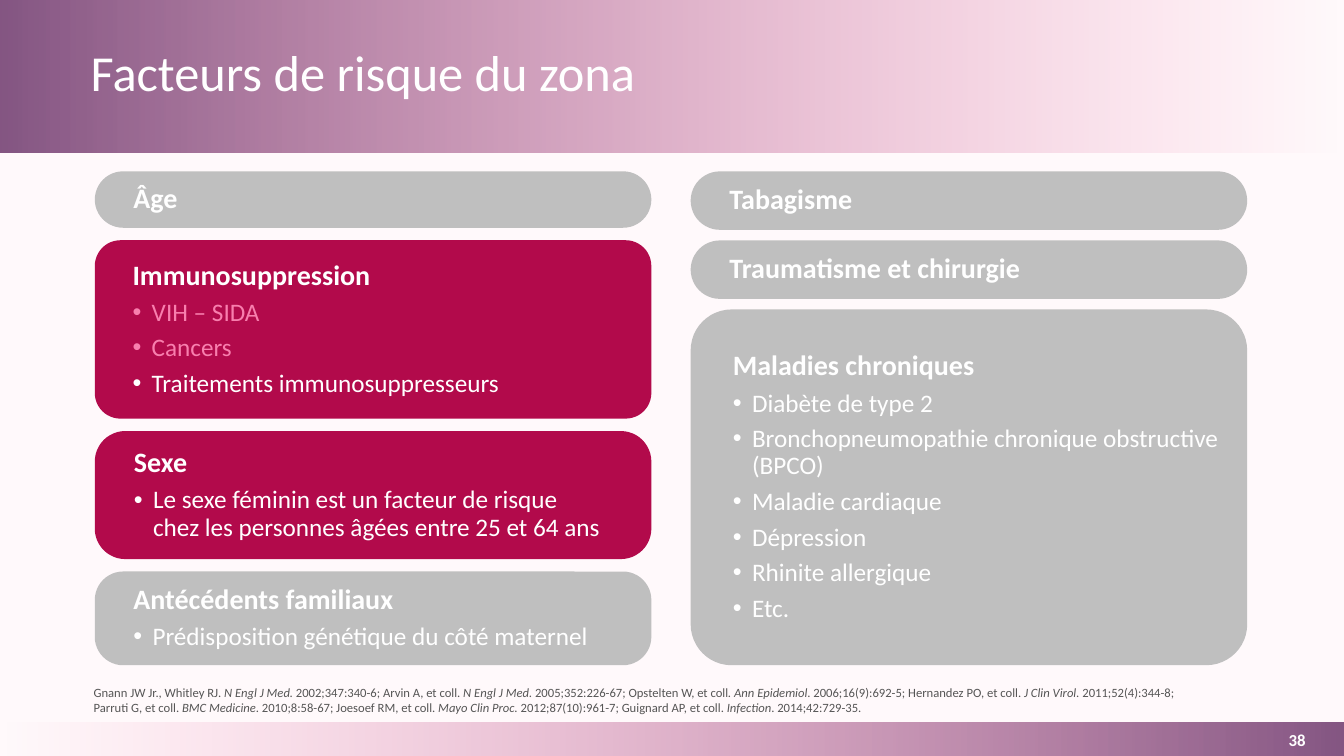
"""Build the slide on risk factors for shingles."""
import pptx
import pptx.util
import pptx.dml.color
import pptx.enum.shapes
import pptx.enum.text
import pptx.oxml.ns
import lxml.etree

Inches, Pt = pptx.util.Inches, pptx.util.Pt
Shape = pptx.enum.shapes.MSO_SHAPE
Align = pptx.enum.text.PP_ALIGN
Anchor = pptx.enum.text.MSO_ANCHOR
qn = pptx.oxml.ns.qn

HUES = {"page": "FFF9FB", "plum": "855683", "pink": "F87FAE", "wine": "B20A4B",
        "gray": "BFBFBF", "white": "FFFFFF", "note": "555555"}
WIDE, HIGH = 13.33, 7.5
TOP, BASE = 1.7, 6.6
CARD = 5.52


def hue(name):
    return pptx.dml.color.RGBColor.from_string(HUES[name])


def style(run, size, tint, bold=False, slant=False):
    font = run.font
    font.name, font.size = "Calibri", Pt(size)
    font.bold, font.italic = bold, slant
    font.color.rgb = hue(tint)


deck = pptx.Presentation()
deck.slide_width, deck.slide_height = Inches(WIDE), Inches(HIGH)
slide = deck.slides.add_slide(deck.slide_layouts[5])
slide.background.fill.solid()
slide.background.fill.fore_color.rgb = hue("page")

for top, height, angle in [(7.17, 0.33, 180), (0, 1.51, 0)]:
    band = slide.shapes.add_shape(Shape.RECTANGLE, 0, Inches(top), Inches(WIDE), Inches(height))
    band.shadow.inherit = False
    band.line.fill.background()
    band.fill.gradient()
    band.fill.gradient_angle = angle
    for stop, tint, place in zip(band.fill.gradient_stops, ("plum", "pink"), (0, 1)):
        stop.color.rgb = hue(tint)
        stop.position = place
    last = band._element.spPr.findall(".//" + qn("a:srgbClr"))[-1]
    lxml.etree.SubElement(last, qn("a:alpha"), val="0")
    slide.shapes._spTree.remove(band._element)
    slide.shapes._spTree.insert(2, band._element)

title = slide.shapes.title
title.left, title.top = Inches(0.8), Inches(0.18)
title.width, title.height = Inches(11.47), Inches(1.14)
frame = title.text_frame
frame.text = "Facteurs de risque du zona"
frame.auto_size = pptx.enum.text.MSO_AUTO_SIZE.NONE
frame.vertical_anchor = Anchor.MIDDLE
frame.paragraphs[0].alignment = Align.LEFT
frame.paragraphs[0].line_spacing = 0.9
style(frame.paragraphs[0].runs[0], 36, "white")

stacks = [
    (0.94, [
        (0.56, 0.5, "gray", ["Âge"]),
        (1.77, 0.144, "wine", ["Immunosuppression", "VIH – SIDA", "Cancers",
                               "Traitements immunosuppresseurs"]),
        (1.27, 0.238, "wine", ["Sexe", "Le sexe féminin est un facteur de risque\n"
                               "chez les personnes âgées entre 25 et 64 ans"]),
        (0.93, 0.303, "gray", ["Antécédents familiaux",
                               "Prédisposition génétique du côté maternel"]),
    ]),
    (6.85, [
        (0.58, 0.5, "gray", ["Tabagisme"]),
        (0.58, 0.5, "gray", ["Traumatisme et chirurgie"]),
        (3.53, 0.115, "gray", ["Maladies chroniques", "Diabète de type 2",
                               "Bronchopneumopathie chronique obstructive (BPCO)",
                               "Maladie cardiaque", "Dépression", "Rhinite allergique",
                               "Etc."]),
    ]),
]
faded = {"VIH – SIDA", "Cancers"}

for left, cards in stacks:
    gap = (BASE - TOP - sum(card[0] for card in cards)) / (len(cards) - 1)
    top = TOP
    for height, curve, tint, lines in cards:
        card = slide.shapes.add_shape(Shape.ROUNDED_RECTANGLE, Inches(left), Inches(top),
                                      Inches(CARD), Inches(height))
        top += height + gap
        card.adjustments[0] = curve
        card.shadow.inherit = False
        card.line.fill.background()
        card.fill.solid()
        card.fill.fore_color.rgb = hue(tint)
        frame = card.text_frame
        frame.word_wrap = True
        frame.vertical_anchor = Anchor.MIDDLE
        frame.margin_left, frame.margin_right = Inches(0.3), Inches(0.07)
        frame.margin_top = frame.margin_bottom = 0
        for row, line in enumerate(lines):
            para = frame.add_paragraph() if row else frame.paragraphs[0]
            para.text = line
            para.alignment = Align.LEFT
            para.line_spacing = 0.9
            para.space_after = Pt(6)
            if row:
                props = para._p.get_or_add_pPr()
                props.set("marL", str(Inches(0.19)))
                props.set("indent", str(-Inches(0.19)))
                lxml.etree.SubElement(props, qn("a:buFont"), typeface="Arial")
                lxml.etree.SubElement(props, qn("a:buChar"), char="•")
            for run in para.runs:
                style(run, 18 if row else 20, "pink" if line in faded else "white", not row)

cites = ("Gnann JW Jr., Whitley RJ. *N Engl J Med. *2002;347:340-6; Arvin A, et coll. "
         "*N Engl J Med. *2005;352:226-67; Opstelten W, et coll*. Ann Epidemiol.* "
         "2006;16(9):692-5; Hernandez PO, et coll. *J Clin Virol. *2011;52(4):344-8; "
         "Parruti G, et coll. *BMC Medicine.* 2010;8:58-67; Joesoef RM, et coll. "
         "*Mayo Clin Proc. *2012;87(10):961-7; Guignard AP, et coll. *Infection*. "
         "2014;42:729-35.")
note = slide.shapes.add_textbox(Inches(0.83), Inches(6.47), Inches(11.19), Inches(0.67))
note.text_frame.word_wrap = True
note.text_frame.vertical_anchor = Anchor.BOTTOM
for part, text in enumerate(cites.split("*")):
    run = note.text_frame.paragraphs[0].add_run()
    run.text = text
    style(run, 9, "note", slant=part % 2 == 1)

page = slide.shapes.add_textbox(Inches(12.4), Inches(7.17), Inches(0.93), Inches(0.33))
frame = page.text_frame
frame.text = "38"
frame.word_wrap = True
frame.vertical_anchor = Anchor.MIDDLE
frame.margin_left = frame.margin_right = frame.margin_top = frame.margin_bottom = 0
frame.paragraphs[0].alignment = Align.CENTER
style(frame.paragraphs[0].runs[0], 12, "white", True)

deck.save("out.pptx")
